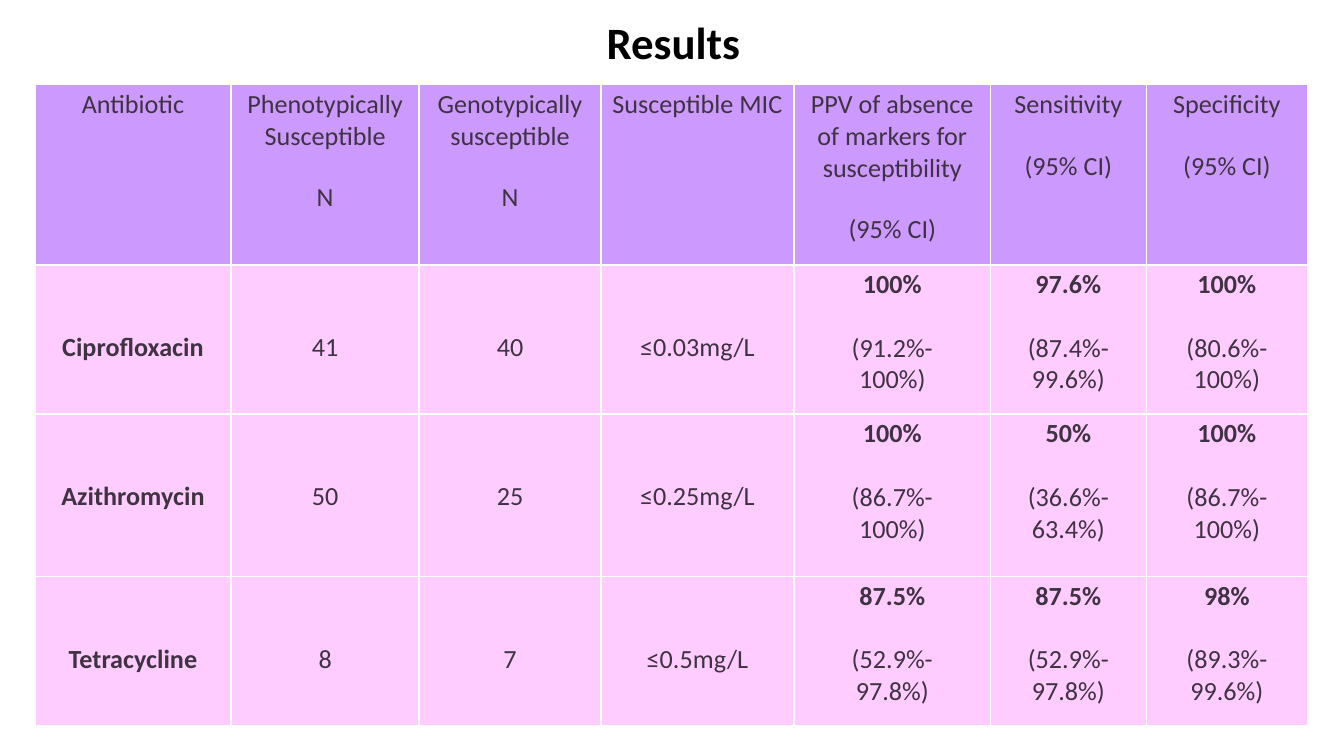
"""Build a results slide with a table of antibiotic susceptibility prediction."""
import pptx
import pptx.dml.color
import pptx.enum.text
import pptx.oxml
import pptx.oxml.ns
import pptx.util
from pptx.util import Inches, Pt

RGBColor = pptx.dml.color.RGBColor
BLACK = RGBColor(0x00, 0x00, 0x00)
INK = RGBColor(0x3F, 0x32, 0x42)
WHITE = RGBColor(0xFF, 0xFF, 0xFF)
PURPLE = RGBColor(0xCC, 0x99, 0xFF)
PINK = RGBColor(0xFF, 0xCC, 0xFF)
FONT = "Calibri"
CENTER = pptx.enum.text.PP_ALIGN.CENTER

TITLE = "Results"
HEADER = [
    "Antibiotic",
    "Phenotypically Susceptible\nN",
    "Genotypically susceptible\nN",
    "Susceptible MIC",
    "PPV of absence of markers for susceptibility\n(95% CI)",
    "Sensitivity\n(95% CI)",
    "Specificity\n(95% CI)",
]
RESULTS = [
    ["Ciprofloxacin", "41", "40", "≤0.03mg/L",
     "100%\n(91.2%-\n100%)", "97.6%\n(87.4%-\n99.6%)", "100%\n(80.6%-\n100%)"],
    ["Azithromycin", "50", "25", "≤0.25mg/L",
     "100%\n(86.7%-\n100%)", "50%\n(36.6%-\n63.4%)", "100%\n(86.7%-\n100%)"],
    ["Tetracycline", "8", "7", "≤0.5mg/L",
     "87.5%\n(52.9%-\n97.8%)", "87.5%\n(52.9%-\n97.8%)", "98%\n(89.3%-\n99.6%)"],
]
SLIDE_WIDTH = Inches(10)
SLIDE_HEIGHT = SLIDE_WIDTH * 9 // 16
COLUMN_WIDTHS = [1.46, 1.4, 1.35, 1.44, 1.46, 1.16, 1.2]
ROW_HEIGHTS = [1.34, 1.11, 1.21, 1.11]
TABLE_LEFT, TABLE_TOP = 0.26, 0.63
HEADER_GAP, RESULT_GAP = 16, 17


def add_borders(cell):
    properties = cell._tc.get_or_add_tcPr()
    for position, side in enumerate(("lnL", "lnR", "lnT", "lnB")):
        properties.insert(position, pptx.oxml.parse_xml(
            f'<a:{side} {pptx.oxml.ns.nsdecls("a")} w="{Pt(1)}"><a:solidFill>'
            f'<a:srgbClr val="{WHITE}"/></a:solidFill></a:{side}>'))


def fill_cell(cell, text, row, column):
    is_header = row == 0
    cell.text = text
    cell.fill.solid()
    cell.fill.fore_color.rgb = PURPLE if is_header else PINK
    add_borders(cell)
    paragraphs = cell.text_frame.paragraphs
    has_interval = len(paragraphs) > 1
    cell.margin_left = cell.margin_right = Inches(0.08)
    cell.margin_top = Inches(0.03 if is_header or has_interval else 0.5)
    cell.margin_bottom = Inches(0.03)
    for index, paragraph in enumerate(paragraphs):
        paragraph.alignment = CENTER
        paragraph.font.name = FONT
        paragraph.font.size = Pt(14)
        paragraph.font.color.rgb = INK
        is_estimate = has_interval and index == 0
        paragraph.font.bold = not is_header and (column == 0 or is_estimate)
        if is_estimate:
            paragraph.space_after = Pt(HEADER_GAP if is_header else RESULT_GAP)


def add_title(slide):
    title = slide.shapes.title
    title.left, title.top = Inches(0.61), Inches(-0.11)
    title.width, title.height = Inches(8.8), Inches(0.66)
    frame = title.text_frame
    frame.text = TITLE
    frame.vertical_anchor = pptx.enum.text.MSO_ANCHOR.BOTTOM
    frame.margin_left = frame.margin_right = Inches(0.07)
    frame.margin_top = frame.margin_bottom = Inches(0.04)
    paragraph = frame.paragraphs[0]
    paragraph.alignment = CENTER
    paragraph.font.name = FONT
    paragraph.font.size = Pt(24)
    paragraph.font.bold = True
    paragraph.font.color.rgb = BLACK


def add_results_table(slide):
    rows = [HEADER] + RESULTS
    table = slide.shapes.add_table(
        len(rows), len(HEADER), Inches(TABLE_LEFT), Inches(TABLE_TOP),
        Inches(sum(COLUMN_WIDTHS)), Inches(sum(ROW_HEIGHTS))).table
    for column, width in zip(table.columns, COLUMN_WIDTHS):
        column.width = Inches(width)
    for row, height in zip(table.rows, ROW_HEIGHTS):
        row.height = Inches(height)
    for row, texts in enumerate(rows):
        for column, text in enumerate(texts):
            fill_cell(table.cell(row, column), text, row, column)


def main():
    presentation = pptx.Presentation()
    presentation.slide_width = SLIDE_WIDTH
    presentation.slide_height = SLIDE_HEIGHT
    slide = presentation.slides.add_slide(presentation.slide_layouts[5])
    add_title(slide)
    add_results_table(slide)
    presentation.save("out.pptx")


if __name__ == "__main__":
    main()
